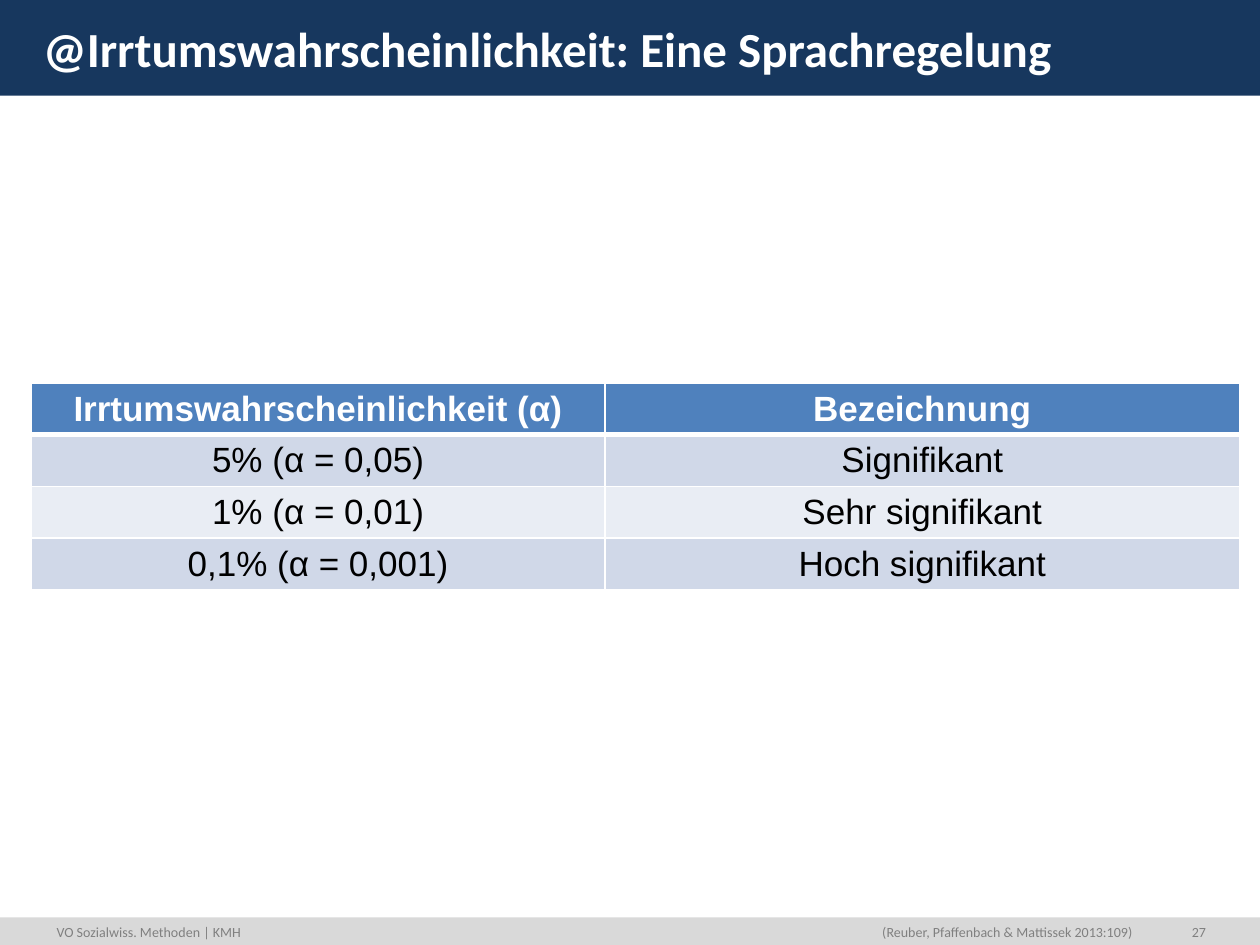
from collections import namedtuple

from lxml import etree
from pptx import Presentation
from pptx import util as u
from pptx.dml.color import RGBColor
from pptx.enum import shapes, text
from pptx.oxml import ns

Box = namedtuple("Box", "left top width height")

NAVY = RGBColor(0x17, 0x37, 0x5E)
PALE = RGBColor(0xD9, 0xD9, 0xD9)
GREY = RGBColor(0x80, 0x80, 0x80)
WHITE = RGBColor(0xFF, 0xFF, 0xFF)
BLACK = RGBColor(0, 0, 0)
BLUE = RGBColor(0x4F, 0x81, 0xBD)
STRIPES = (RGBColor(0xD0, 0xD8, 0xE8), RGBColor(0xE9, 0xED, 0xF4))

COLUMN = u.Inches(10) // 100
ROW = u.Inches(7.5) // 75
TITLE_BAND = Box(0, 0, 100, 7.6)
FOOTER_BAND = Box(0, 72.8, 100, 2.2)
TABLE_AREA = Box(2.5, 30.4, 95.9, 16.4)

LEVELS = [
    ("Irrtumswahrscheinlichkeit (α)", "Bezeichnung"),
    ("5% (α = 0,05)", "Signifikant"),
    ("1% (α = 0,01)", "Sehr signifikant"),
    ("0,1% (α = 0,001)", "Hoch signifikant"),
]


def place(box):
    return (round(box.left * COLUMN), round(box.top * ROW),
            round(box.width * COLUMN), round(box.height * ROW))


def write(frame, words, size=8, font="Calibri", color=GREY, bold=False,
          align=text.PP_ALIGN.LEFT, anchor=text.MSO_ANCHOR.TOP):
    frame.word_wrap = True
    frame.vertical_anchor = anchor
    para = frame.paragraphs[0]
    para.alignment = align
    span = para.add_run()
    span.text = words
    span.font.size = u.Pt(size)
    span.font.name = font
    span.font.bold = bold
    span.font.color.rgb = color


def add_band(page, box, color):
    band = page.shapes.add_shape(shapes.MSO_SHAPE.RECTANGLE, *place(box))
    band.shadow.inherit = False
    band.fill.solid()
    band.fill.fore_color.rgb = color
    band.line.fill.background()
    band.element.getparent().insert(2, band.element)


def add_title(page, box, words):
    add_band(page, box, NAVY)
    title = page.shapes.title
    title.left, title.top, title.width, title.height = place(
        Box(box.left + 2.4, box.top + 1, box.width - 5.6, 5))
    write(title.text_frame, words, size=28, color=WHITE, bold=True)
    title.text_frame.auto_size = text.MSO_AUTO_SIZE.NONE


def add_footer(page, box):
    add_band(page, box, PALE)
    right = text.PP_ALIGN.RIGHT
    for left, width, words, align in (
            (3.5, 29.9, "VO Sozialwiss. Methoden | KMH", text.PP_ALIGN.LEFT),
            (48.4, 42.5, "(Reuber, Pfaffenbach & Mattissek 2013:109)", right),
            (92.5, 4.2, "27", right)):
        note = page.shapes.add_textbox(
            *place(Box(box.left + left, box.top, width, 2.4)))
        write(note.text_frame, words, align=align)


def add_borders(cell, bottom):
    properties = cell.fill._xPr
    widths = {"lnL": 1, "lnR": 1, "lnT": 1, "lnB": bottom}
    for index, (side, width) in enumerate(widths.items()):
        line = etree.Element(ns.qn("a:" + side), w=str(u.Pt(width)))
        fill = etree.SubElement(line, ns.qn("a:solidFill"))
        etree.SubElement(fill, ns.qn("a:srgbClr"), val=str(WHITE))
        properties.insert(index, line)


def add_levels(page, box, rows):
    table = page.shapes.add_table(len(rows), 2, *place(box)).table
    table.columns[0].width = round(45.5 * COLUMN)
    table.columns[1].width = round((box.width - 45.5) * COLUMN)
    for number, row in enumerate(rows):
        header = number == 0
        for cell, words in zip(table.rows[number].cells, row):
            cell.margin_left = cell.margin_right = u.Inches(0.12)
            cell.margin_top = cell.margin_bottom = u.Inches(0.05)
            cell.fill.solid()
            cell.fill.fore_color.rgb = BLUE if header else STRIPES[(number - 1) % 2]
            write(cell.text_frame, words, size=20, font="Arial", bold=header,
                  color=WHITE if header else BLACK, align=text.PP_ALIGN.CENTER)
            add_borders(cell, bottom=3 if header else 1)


def main():
    deck = Presentation()
    deck.slide_width, deck.slide_height = 100 * COLUMN, 75 * ROW
    page = deck.slides.add_slide(deck.slide_layouts.get_by_name("Title Only"))
    add_title(page, TITLE_BAND, "@Irrtumswahrscheinlichkeit: Eine Sprachregelung")
    add_levels(page, TABLE_AREA, LEVELS)
    add_footer(page, FOOTER_BAND)
    deck.save("out.pptx")


if __name__ == "__main__":
    main()
